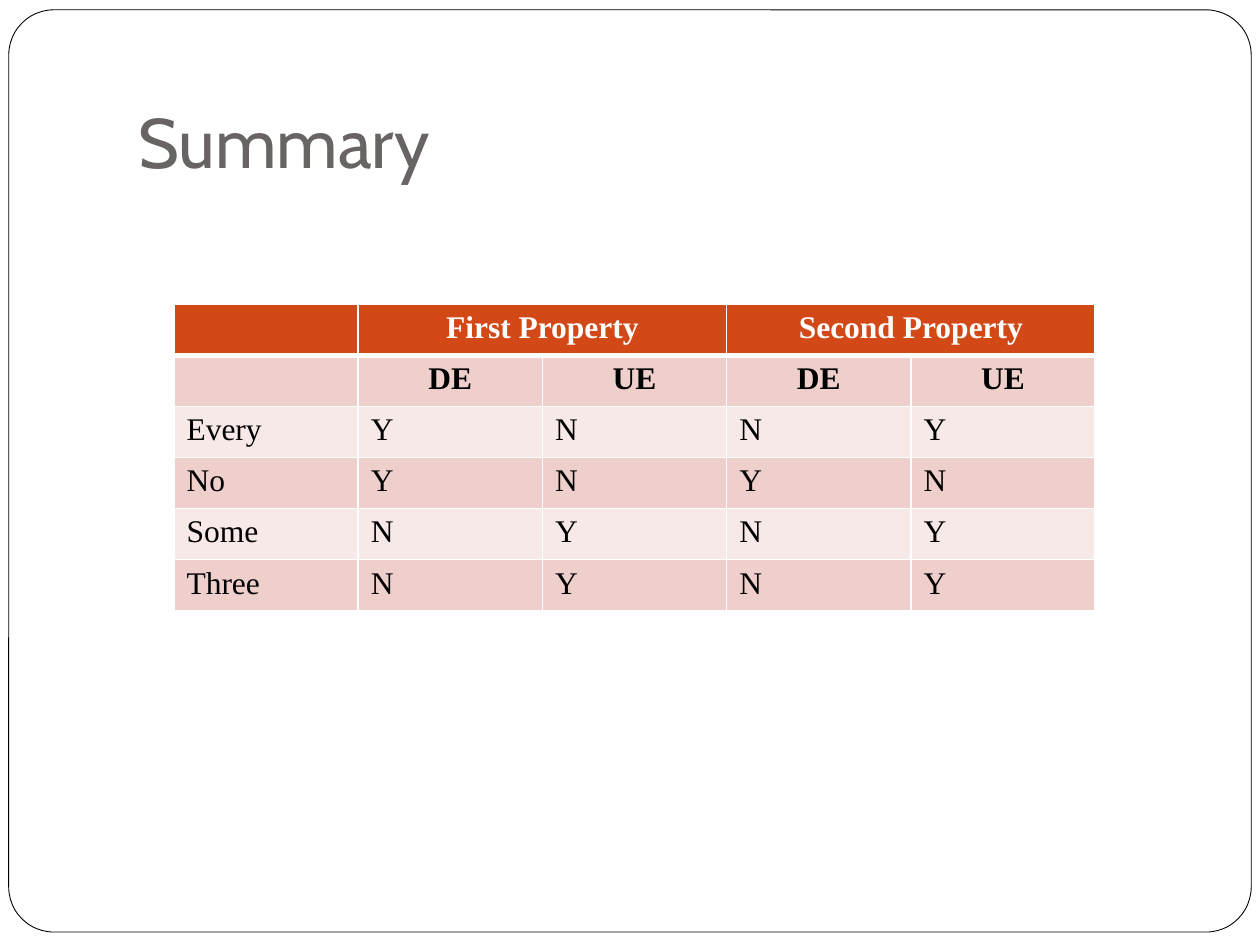
from dataclasses import dataclass
from lxml.etree import SubElement
from pptx import Presentation
from pptx.dml.color import RGBColor
from pptx.enum.shapes import MSO_SHAPE
from pptx.enum.text import MSO_ANCHOR, PP_ALIGN
from pptx.oxml.ns import qn
from pptx.util import Pt


@dataclass(frozen=True)
class Theme:
    white: str = "FFFFFF"
    black: str = "000000"
    title: str = "696464"
    header: str = "D34817"
    bands: tuple[str, str] = ("EFCFCC", "F7E9E8")
    title_font: str = "Cabin"
    table_font: str = "Times New Roman"
    title_size: float = 40
    table_size: float = 18
    rule: float = 1
    header_rule: float = 3


@dataclass(frozen=True)
class Row:
    values: tuple[str, ...]
    fill: str
    color: str
    bold: bool = False
    bottom: float = 1


T = Theme()

ROWS = [
    Row(("", "First Property", "", "Second Property", ""),
        T.header, T.white, True, T.header_rule),
    Row(("", "DE", "UE", "DE", "UE"), T.bands[0], T.black, True),
    *(
        Row(tuple(line.split()), T.bands[(i + 1) % 2], T.black)
        for i, line in enumerate(
            ("Every Y N N Y", "No Y N Y N", "Some N Y N Y", "Three N Y N Y")
        )
    ),
]
MERGES = ((1, 2), (3, 4))
COL_WIDTH = 105.3
ROW_HEIGHT = 29.2


def set_attrs(obj, values: dict) -> None:
    for name, value in values.items():
        setattr(obj, name, value)


def write(tf, text: str, font: dict, color: str, align=PP_ALIGN.LEFT) -> None:
    p = tf.paragraphs[0]
    p.alignment = align
    r = p.add_run()
    r.text = text
    set_attrs(r.font, font)
    r.font.color.rgb = RGBColor.from_string(color)


def add_frame(s) -> None:
    sp = s.shapes.add_shape(
        MSO_SHAPE.ROUNDED_RECTANGLE, Pt(5), Pt(5.6), Pt(710), Pt(527)
    )
    sp.adjustments[0] = 0.049
    sp.shadow.inherit = False
    sp.fill.solid()
    sp.fill.fore_color.rgb = RGBColor.from_string(T.white)
    sp.line.color.rgb = RGBColor.from_string(T.black)
    sp.line.width = Pt(0.5)


def add_title(s, text: str) -> None:
    tf = s.shapes.add_textbox(Pt(72), Pt(21.6), Pt(612), Pt(90)).text_frame
    set_attrs(tf, {
        "word_wrap": True,
        "vertical_anchor": MSO_ANCHOR.BOTTOM,
        "margin_left": Pt(7.2),
        "margin_right": Pt(7.2),
        "margin_top": Pt(3.6),
        "margin_bottom": Pt(7.2),
    })
    write(tf, text, {"name": T.title_font, "size": Pt(T.title_size)}, T.title)


def set_borders(cell, bottom: float) -> None:
    tc_pr = cell._tc.get_or_add_tcPr()
    widths = {"lnL": T.rule, "lnR": T.rule, "lnT": T.rule, "lnB": bottom}
    for side, width in widths.items():
        ln = SubElement(tc_pr, qn(f"a:{side}"), w=str(Pt(width)))
        fill = SubElement(ln, qn("a:solidFill"))
        SubElement(fill, qn("a:srgbClr"), val=T.white)


def style_cell(cell, text: str, row: Row) -> None:
    set_borders(cell, row.bottom)
    cell.fill.solid()
    cell.fill.fore_color.rgb = RGBColor.from_string(row.fill)
    if text:
        font = {"name": T.table_font, "size": Pt(T.table_size), "bold": row.bold}
        align = PP_ALIGN.CENTER if row.bold else PP_ALIGN.LEFT
        write(cell.text_frame, text, font, row.color, align)


def add_summary_table(s, rows: list[Row]) -> None:
    n_cols = len(rows[0].values)
    table = s.shapes.add_table(
        len(rows), n_cols, Pt(99.4), Pt(173.8),
        Pt(COL_WIDTH * n_cols), Pt(ROW_HEIGHT * len(rows)),
    ).table
    for col in table.columns:
        col.width = Pt(COL_WIDTH)
    for table_row in table.rows:
        table_row.height = Pt(ROW_HEIGHT)
    for first, last in MERGES:
        table.cell(0, first).merge(table.cell(0, last))
    for i, row in enumerate(rows):
        for j, text in enumerate(row.values):
            style_cell(table.cell(i, j), text, row)


def main() -> None:
    prs = Presentation()
    set_attrs(prs, {"slide_width": Pt(720), "slide_height": Pt(540)})
    s = prs.slides.add_slide(prs.slide_layouts[6])
    add_frame(s)
    add_title(s, "Summary")
    add_summary_table(s, ROWS)
    prs.save("out.pptx")


if __name__ == "__main__":
    main()
